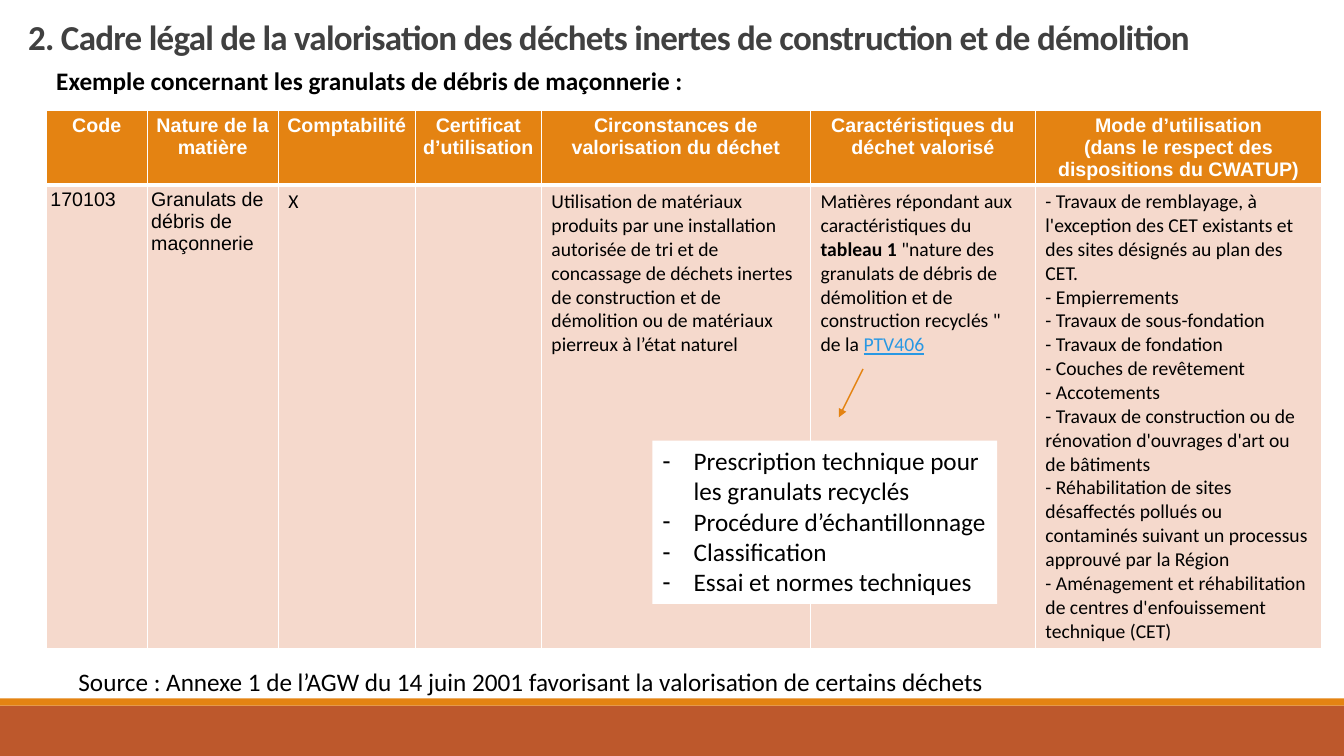
from lxml import etree
from pptx import Presentation
from pptx.dml.color import RGBColor
from pptx.enum.shapes import MSO_CONNECTOR, MSO_SHAPE
from pptx.enum.text import MSO_ANCHOR, MSO_AUTO_SIZE, PP_ALIGN
from pptx.oxml.ns import qn
from pptx.util import Inches, Pt

RECTANGLE = MSO_SHAPE.RECTANGLE
STRAIGHT = MSO_CONNECTOR.STRAIGHT
CENTER, LEFT = PP_ALIGN.CENTER, PP_ALIGN.LEFT
TOP = MSO_ANCHOR.TOP
NO_AUTOFIT = MSO_AUTO_SIZE.NONE

WIDTH, HEIGHT = 13.33, 7.5
ORANGE, RUST, PINK = "E48312", "BD582C", "F5D9CC"
WHITE, BLACK, GREY, BLUE = "FFFFFF", "000000", "404040", "2998E3"

TITLE = "2. Cadre légal de la valorisation des déchets inertes de construction et de démolition"
CAPTIONS = [
    ("Exemple concernant les granulats de débris de maçonnerie :", 0.46, 0.6, True),
    ("Source : Annexe 1 de l’AGW du 14 juin 2001 favorisant la valorisation de certains déchets", 0.68, 6.56, False),
]
USES = [
    "- Travaux de remblayage, à l'exception des CET existants et des sites désignés au plan des CET.",
    "- Empierrements",
    "- Travaux de sous-fondation",
    "- Travaux de fondation",
    "- Couches de revêtement",
    "- Accotements",
    "- Travaux de construction ou de rénovation d'ouvrages d'art ou de bâtiments",
    "- Réhabilitation de sites désaffectés pollués ou contaminés suivant un processus approuvé par la Région",
    "- Aménagement et réhabilitation de centres d'enfouissement technique (CET)",
]
REQUIREMENTS = [
    ("Matières répondant aux caractéristiques du ", "plain"),
    ("tableau 1 ", "bold"),
    ("\"nature des granulats de débris de démolition et de construction recyclés \" de la ", "plain"),
    ("PTV406", "link"),
]
COLUMNS = [
    ("Code", 1, "Arial", [[("170103", "plain")]]),
    ("Nature de la matière", 1.3, "Arial", [[("Granulats de débris de maçonnerie", "plain")]]),
    ("Comptabilité", 1.36, "Calibri", [[("X", "plain")]]),
    ("Certificat d’utilisation", 1.25, "Calibri", []),
    ("Circonstances de valorisation du déchet", 2.67, "Calibri", [[(
        "Utilisation de matériaux produits par une installation autorisée de tri et de "
        "concassage de déchets inertes  de construction et de démolition ou de matériaux "
        "pierreux à l’état naturel", "plain")]]),
    ("Caractéristiques du déchet valorisé", 2.23, "Calibri", [REQUIREMENTS]),
    ("Mode d’utilisation\v(dans le respect des dispositions du CWATUP)", 2.84, "Calibri",
     [[(use, "plain")] for use in USES]),
]
ROW_HEIGHTS = [0.71, 4.45]
CONTENTS = [
    "Prescription technique pour les granulats recyclés",
    "Procédure d’échantillonnage",
    "Classification",
    "Essai et normes techniques",
]


def color(value):
    return RGBColor.from_string(value)


def paint(shape, value):
    shape.fill.solid()
    shape.fill.fore_color.rgb = color(value)


def place(shape, left, top, width, height):
    shape.left, shape.top = Inches(left), Inches(top)
    shape.width, shape.height = Inches(width), Inches(height)


def style(paragraph, size, value=BLACK, name="Calibri", bold=False, align=LEFT):
    paragraph.alignment = align
    font = paragraph.font
    font.name, font.size, font.bold = name, Pt(size), bold
    font.color.rgb = color(value)


def set_frame(frame):
    frame.word_wrap = True
    frame.auto_size = NO_AUTOFIT
    frame.vertical_anchor = TOP


def format_cell(cell, fill, narrow, top, bottom):
    if narrow:
        cell.margin_left = cell.margin_right = Inches(0.04)
        cell.margin_top = cell.margin_bottom = Inches(0.04)
    properties = cell._tc.get_or_add_tcPr()
    for side, width in (("L", 1), ("R", 1), ("T", top), ("B", bottom)):
        line = etree.SubElement(properties, qn(f"a:ln{side}"), w=str(Pt(width)))
        solid = etree.SubElement(line, qn("a:solidFill"))
        etree.SubElement(solid, qn("a:srgbClr"), val=WHITE)
    paint(cell, fill)


def add_bands(slide):
    for top, height, value in ((7, 0.5, RUST), (6.93, 0.07, ORANGE)):
        band = slide.shapes.add_shape(RECTANGLE, 0, Inches(top), Inches(WIDTH), Inches(height))
        band.shadow.inherit = False
        paint(band, value)
        band.line.fill.background()


def add_rules_table(slide):
    total = sum(width for _, width, _, _ in COLUMNS)
    table = slide.shapes.add_table(
        2, len(COLUMNS), Inches(0.46), Inches(1.1), Inches(total), Inches(sum(ROW_HEIGHTS))).table
    table.horz_banding = False
    for row, height in zip(table.rows, ROW_HEIGHTS):
        row.height = Inches(height)
    for index, (heading, width, name, paragraphs) in enumerate(COLUMNS):
        table.columns[index].width = Inches(width)
        header, body = table.cell(0, index), table.cell(1, index)
        format_cell(header, ORANGE, True, 1, 3)
        format_cell(body, PINK, name == "Arial", 3, 1)
        header.text_frame.text = heading
        style(header.text_frame.paragraphs[0], 14, WHITE, "Arial", True, CENTER)
        for number, runs in enumerate(paragraphs):
            frame = body.text_frame
            paragraph = frame.add_paragraph() if number else frame.paragraphs[0]
            style(paragraph, 14, name=name)
            for text, look in runs:
                run = paragraph.add_run()
                run.text = text
                if look == "bold":
                    run.font.bold = True
                elif look == "link":
                    run.font.underline = True
                    run.font.color.rgb = color(BLUE)


def add_arrow(slide):
    arrow = slide.shapes.add_connector(
        STRAIGHT, Inches(8.56), Inches(3.66), Inches(8.32), Inches(4.14))
    arrow.line.color.rgb = color(ORANGE)
    arrow.line.width = Pt(1)
    etree.SubElement(arrow.line._get_or_add_ln(), qn("a:tailEnd"), type="triangle")
    etree.SubElement(arrow._element.spPr, qn("a:effectLst"))


def fill_title(title):
    place(title, 0.18, 0.17, 12.74, 0.93)
    set_frame(title.text_frame)
    title.text_frame.text = TITLE
    paragraph = title.text_frame.paragraphs[0]
    style(paragraph, 25, GREY, bold=True)
    paragraph.line_spacing = 0.85
    paragraph.runs[0]._r.get_or_add_rPr().set("spc", "-50")


def fill_callout(slide, callout):
    place(callout, 6.47, 4.37, 3.42, 1.62)
    paint(callout, WHITE)
    set_frame(callout.text_frame)
    callout.text_frame.text = "\n".join(CONTENTS)
    for paragraph in callout.text_frame.paragraphs:
        style(paragraph, 18)
        paragraph.space_before = Pt(0)
        properties = paragraph._p.get_or_add_pPr()
        properties.set("marL", str(Inches(0.31)))
        properties.set("indent", str(-Inches(0.31)))
        bullet = etree.Element(qn("a:buChar"), char="-")
        properties.find(qn("a:defRPr")).addprevious(bullet)
    slide.shapes._spTree.append(callout._element)


def add_captions(slide):
    for text, left, top, bold in CAPTIONS:
        caption = slide.shapes.add_textbox(Inches(left), Inches(top), Inches(10.64), Inches(0.4))
        set_frame(caption.text_frame)
        caption.text_frame.text = text
        style(caption.text_frame.paragraphs[0], 18, bold=bold)


def main():
    presentation = Presentation()
    presentation.slide_width, presentation.slide_height = Inches(WIDTH), Inches(HEIGHT)
    slide = presentation.slides.add_slide(presentation.slide_layouts[1])
    add_bands(slide)
    add_rules_table(slide)
    add_arrow(slide)
    fill_title(slide.shapes.title)
    fill_callout(slide, slide.placeholders[1])
    add_captions(slide)
    presentation.save("out.pptx")


if __name__ == "__main__":
    main()
